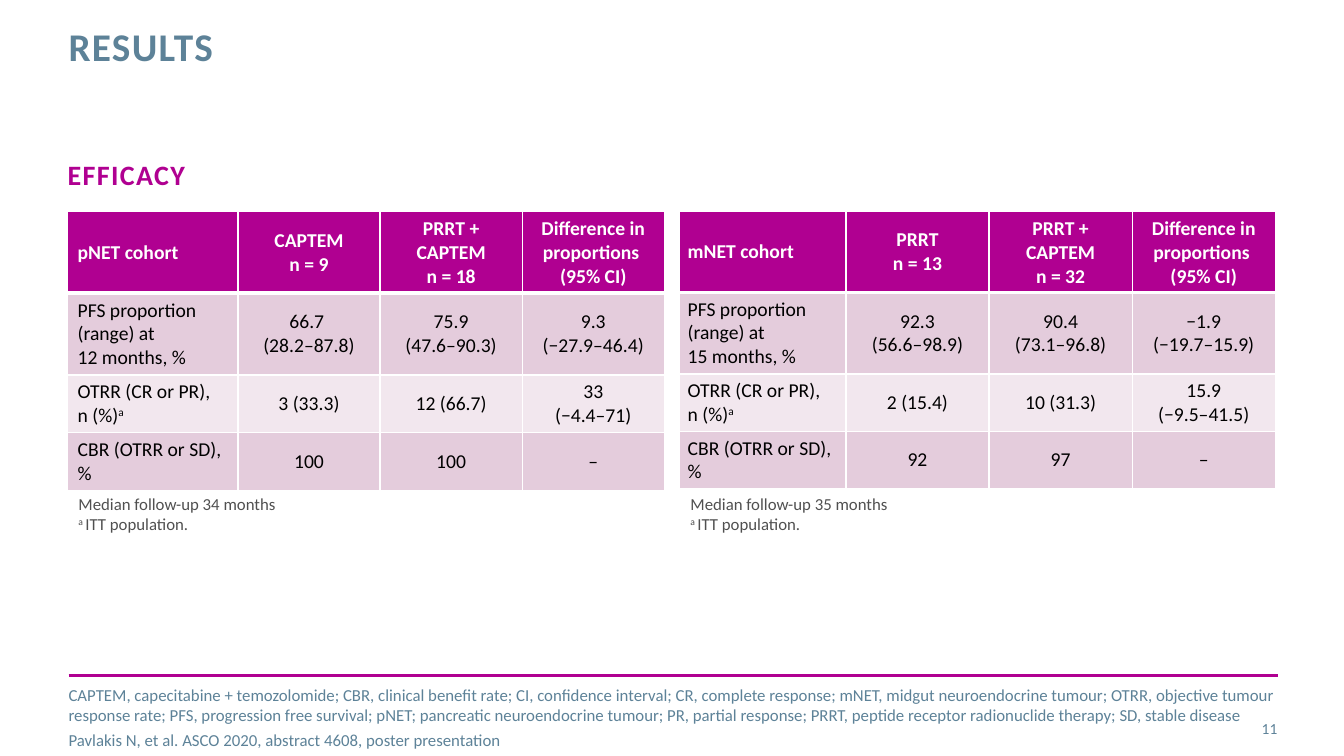
"""Build the RESULTS slide with efficacy tables for the pNET and mNET cohorts."""
from lxml import etree
from pptx import Presentation
from pptx import util as u
from pptx.dml.color import RGBColor
from pptx.enum import shapes, text
from pptx.oxml import ns

PX = 9144
MAGENTA = RGBColor(0xB0, 0x00, 0x91)
SLATE = RGBColor(0x5D, 0x82, 0x98)
GREY = RGBColor(0x50, 0x50, 0x50)
WHITE = RGBColor(0xFF, 0xFF, 0xFF)
BLACK = RGBColor(0, 0, 0)
PINK = RGBColor(0xE4, 0xCC, 0xDC)
PALE = RGBColor(0xF2, 0xE7, 0xEE)


def style(frame, size, color, bold=False, align=text.PP_ALIGN.LEFT, tracking=0):
    for paragraph in frame.paragraphs:
        paragraph.alignment = align
        for run in paragraph.runs:
            run.font.name = "Calibri"
            run.font.size = u.Pt(size)
            run.font.bold = bold
            run.font.color.rgb = color
            if tracking:
                run.font._element.set("spc", str(tracking))


def place(box, left, top, width, height, anchor):
    box.left, box.top, box.width, box.height = (n * PX for n in (left, top, width, height))
    frame = box.text_frame
    frame.word_wrap = True
    frame.auto_size = text.MSO_AUTO_SIZE.NONE
    frame.vertical_anchor = anchor
    frame.margin_left = frame.margin_top = frame.margin_right = frame.margin_bottom = 0
    return frame


TOP, MIDDLE = text.MSO_ANCHOR.TOP, text.MSO_ANCHOR.MIDDLE
deck = Presentation()
deck.slide_width, deck.slide_height = 1333 * PX, 750 * PX
slide = deck.slides.add_slide(deck.slide_layouts[3])
title, heading, abbreviations = [slide.placeholders[i] for i in range(3)]

footer_rule = slide.shapes.add_connector(
    shapes.MSO_CONNECTOR.STRAIGHT, 68 * PX, 670 * PX, 1268 * PX, 670 * PX)
footer_rule.line.color.rgb = MAGENTA
footer_rule.line.width = u.Pt(2)
etree.SubElement(footer_rule._element.spPr, ns.qn("a:effectLst"))

title_frame = place(title, 68, 27, 956, 88, TOP)
title_frame.text = "RESULTS"
title_frame.paragraphs[0].line_spacing = u.Pt(30)
style(title_frame, 28, SLATE, True, tracking=100)

heading_frame = place(heading, 67, 156, 1200, 77, TOP)
heading_frame.text = "EFFICACY"
abbreviations_frame = place(abbreviations, 68, 673, 1217, 77, MIDDLE)
abbreviations_frame.text = (
    "CAPTEM, capecitabine + temozolomide; CBR, clinical benefit rate; CI, confidence interval; "
    "CR, complete response; mNET, midgut neuroendocrine tumour; OTRR, objective tumour response "
    "rate; PFS, progression free survival; pNET; pancreatic neuroendocrine tumour; PR, partial "
    "response; PRRT, peptide receptor radionuclide therapy; SD, stable disease\n"
    "Pavlakis N, et al. ASCO 2020, abstract 4608, poster presentation")
for frame in (heading_frame, abbreviations_frame):
    for i, paragraph in enumerate(frame.paragraphs):
        properties = paragraph._p.get_or_add_pPr()
        properties.set("marL", "0")
        properties.set("indent", "0")
        etree.SubElement(properties, ns.qn("a:buNone"))
        paragraph.space_before = u.Pt(3 if i else 0)
style(heading_frame, 20, MAGENTA, True, tracking=100)
style(abbreviations_frame, 12, SLATE)

page_number = slide.shapes.add_textbox(0, 0, 0, 0)
page_frame = place(page_number, 1181, 703, 86, 40, MIDDLE)
page_frame.text = "11"
style(page_frame, 11, SLATE, align=text.PP_ALIGN.RIGHT)

DIFFERENCE = "Difference in proportions \n(95% CI)"
cohorts = [
    (67, 68, (169, 141, 141, 141), 10, 34, [
        ["pNET cohort", "CAPTEM\nn = 9", "PRRT + CAPTEM\nn = 18", DIFFERENCE],
        ["PFS proportion (range) at \v12 months, %", "66.7 \n(28.2–87.8)",
         "75.9\n(47.6–90.3)", "9.3\n(−27.9–46.4)"],
        ["OTRR (CR or PR), \vn (%)", "3 (33.3)", "12 (66.7)", "33\n(−4.4–71)"],
        ["CBR (OTRR or SD), %", "100", "100", "–"]]),
    (674, 675, (165, 142, 142, 142), 8, 35, [
        ["mNET cohort", "PRRT\nn = 13", "PRRT + CAPTEM\nn = 32", DIFFERENCE],
        ["PFS proportion (range) at \v15 months, %", "92.3\n(56.6–98.9)",
         "90.4\n(73.1–96.8)", "−1.9\n(−19.7–15.9)"],
        ["OTRR (CR or PR), \vn (%)", "2 (15.4)", "10 (31.3)", "15.9\n(−9.5–41.5)"],
        ["CBR (OTRR or SD), %", "92", "97", "–"]]),
]
ROW_HEIGHTS = (80, 81, 57, 57)
ROW_FILLS = (MAGENTA, PINK, PALE, PINK)

for left, note_left, widths, inset, months, rows in cohorts:
    results = slide.shapes.add_table(
        4, 4, left * PX, 210 * PX, sum(widths) * PX, sum(ROW_HEIGHTS) * PX).table
    for column, width in zip(results.columns, widths):
        column.width = width * PX
    for r, values in enumerate(rows):
        results.rows[r].height = ROW_HEIGHTS[r] * PX
        for c, value in enumerate(values):
            cell = results.cell(r, c)
            cell.vertical_anchor = MIDDLE
            cell.margin_left = cell.margin_right = inset * PX
            cell.margin_top = cell.margin_bottom = 5 * PX
            for side in "LRTB":
                thick = (r, side) in ((0, "B"), (1, "T"))
                border = etree.SubElement(cell._tc.get_or_add_tcPr(), ns.qn("a:ln" + side),
                                          w=str(u.Pt(3 if thick else 1)))
                line_fill = etree.SubElement(border, ns.qn("a:solidFill"))
                etree.SubElement(line_fill, ns.qn("a:srgbClr"), val=str(WHITE))
            cell.fill.solid()
            cell.fill.fore_color.rgb = ROW_FILLS[r]
            cell.text_frame.text = value
            if value.endswith("n (%)"):
                note_mark = cell.text_frame.paragraphs[0].add_run()
                note_mark.text = "a"
                note_mark.font._element.set("baseline", "30000")
            style(cell.text_frame, 14, BLACK if r else WHITE, r == 0,
                  text.PP_ALIGN.CENTER if c else text.PP_ALIGN.LEFT)

    note_frame = slide.shapes.add_textbox(
        note_left * PX, 485 * PX, 218 * PX, 50 * PX).text_frame
    note_frame.word_wrap = False
    note = note_frame.paragraphs[0]
    note.text = f"Median follow-up {months} months\v"
    note_mark, population = note.add_run(), note.add_run()
    note_mark.text, population.text = "a ", "ITT population."
    note_mark.font._element.set("baseline", "30000")
    style(note_frame, 12, GREY)

deck.save("out.pptx")
